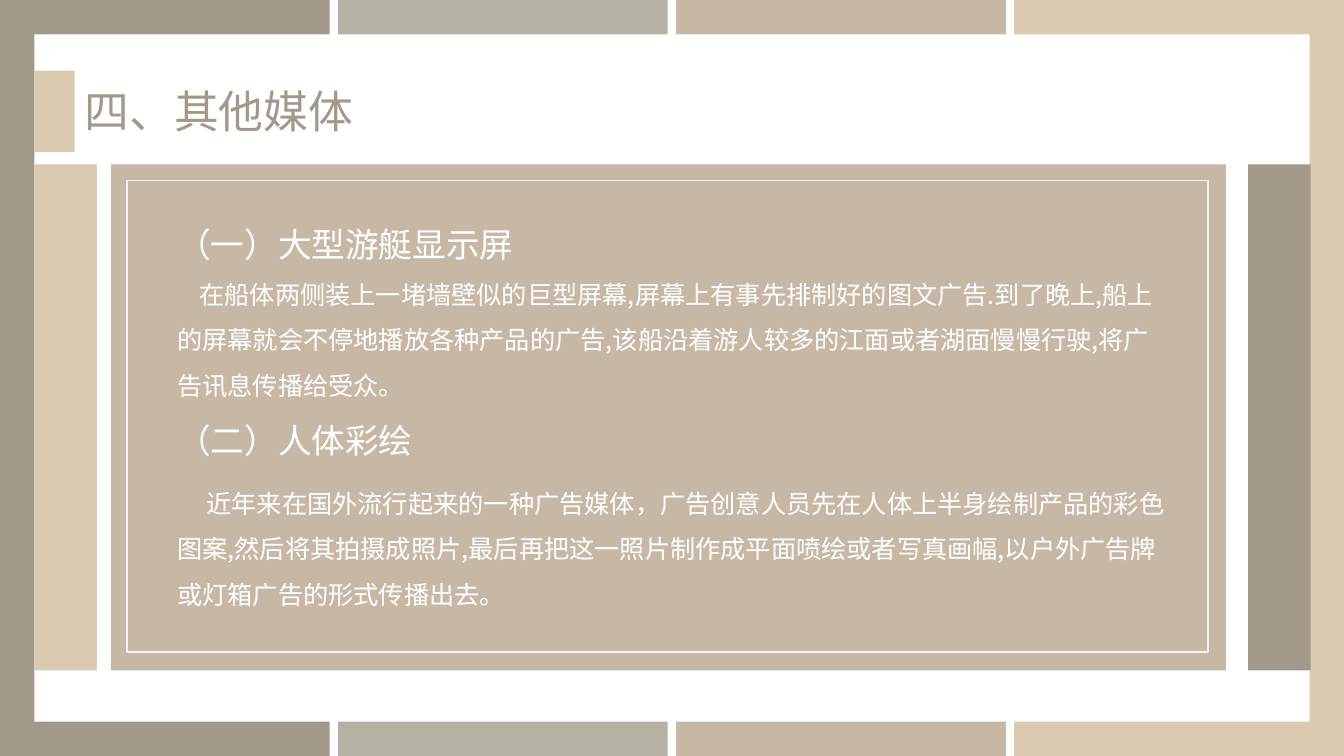
import pptx
import pptx.dml.color
import pptx.enum.shapes
import pptx.enum.text
import pptx.oxml.ns
import pptx.util
from lxml import etree

Inches = pptx.util.Inches
Pt = pptx.util.Pt

TAUPE, SAGE, ROSE, SAND = "A2998A", "B6B1A5", "C7B8A6", "DACAB0"
WHITE, FRAME = "FFFFFF", "F2F2F2"


def color(value):
    return pptx.dml.color.RGBColor.from_string(value)


class SlideBuilder:
    font_name = "Noto Sans CJK SC"

    def __init__(self, slide):
        self.slide = slide

    def rectangle(self, left, top, width, height, fill=None, line=None):
        shape = self.slide.shapes.add_shape(
            pptx.enum.shapes.MSO_SHAPE.RECTANGLE,
            Inches(left), Inches(top), Inches(width), Inches(height))
        shape.shadow.inherit = False
        if fill:
            shape.fill.solid()
            shape.fill.fore_color.rgb = color(fill)
        else:
            shape.fill.background()
        if line:
            shape.line.color.rgb = color(line)
            shape.line.width = Pt(1)
        else:
            shape.line.fill.background()

    def text(self, left, top, width, height, paragraphs, text_color):
        box = self.slide.shapes.add_textbox(
            Inches(left), Inches(top), Inches(width), Inches(height))
        frame = box.text_frame
        frame.word_wrap = True
        frame.auto_size = pptx.enum.text.MSO_AUTO_SIZE.SHAPE_TO_FIT_TEXT
        for index, (wording, size, indent, spacing) in enumerate(paragraphs):
            paragraph = frame.paragraphs[0] if index == 0 else frame.add_paragraph()
            for name, value in spacing.items():
                setattr(paragraph, name, value)
            if indent:
                paragraph._p.get_or_add_pPr().set("indent", str(Inches(indent)))
            run = paragraph.add_run()
            run.text = wording
            for name, value in {"name": self.font_name, "size": Pt(size)}.items():
                setattr(run.font, name, value)
            run.font.color.rgb = color(text_color)
            etree.SubElement(run._r.get_or_add_rPr(), pptx.oxml.ns.qn("a:ea"),
                             typeface=self.font_name)


def main():
    deck = pptx.Presentation()
    deck.slide_width, deck.slide_height = Inches(13.33), Inches(7.5)
    builder = SlideBuilder(deck.slides.add_slide(deck.slide_layouts[6]))

    band_width, band_pitch = 3.27, 3.353
    for column, band_color in enumerate((TAUPE, SAGE, ROSE, SAND)):
        builder.rectangle(column * band_pitch, 0, band_width, 7.5, band_color)
    builder.rectangle(0.34, 0.34, 12.65, 6.82, WHITE)

    builder.rectangle(0.34, 0.7, 0.4, 0.81, SAND)
    builder.text(0.74, 0.78, 5.57, 0.64, [("四、其他媒体", 32, 0, {})], TAUPE)

    panel_top, panel_height = 1.63, 5.02
    for left, width, panel_color in (
            (12.38, 0.62, TAUPE), (0.34, 0.62, SAND), (1.1, 11.06, ROSE)):
        builder.rectangle(left, panel_top, width, panel_height, panel_color)

    spaced = {"line_spacing": 1.5}
    media_sections = [
        ("（一）大型游艇显示屏", 24, 0, spaced),
        ("在船体两侧装上一堵墙壁似的巨型屏幕,屏幕上有事先排制好的图文广告.到了晚上,"
         "船上的屏幕就会不停地播放各种产品的广告,该船沿着游人较多的江面或者湖面慢慢行驶,"
         "将广告讯息传播给受众。", 18, 0.22, spaced),
        ("（二）人体彩绘", 24, 0, spaced),
        ("近年来在国外流行起来的一种广告媒体，广告创意人员先在人体上半身绘制产品的彩色图案,"
         "然后将其拍摄成照片,最后再把这一照片制作成平面喷绘或者写真画幅,"
         "以户外广告牌或灯箱广告的形式传播出去。", 18, 0.29,
         {**spaced, "space_before": Pt(9)}),
    ]
    builder.text(1.66, 1.97, 10.08, 4.19, media_sections, WHITE)
    builder.rectangle(1.26, 1.79, 10.72, 4.68, line=FRAME)

    deck.save("out.pptx")


if __name__ == "__main__":
    main()
